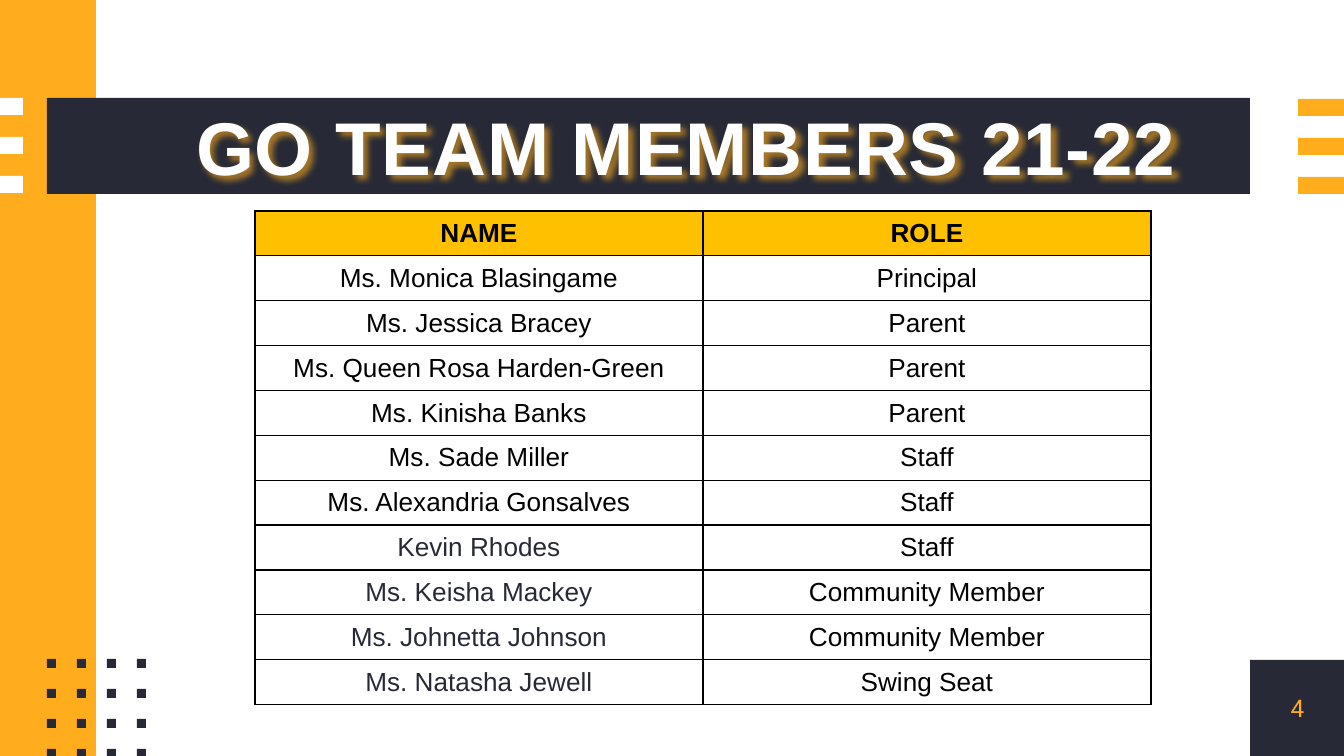
from pptx import Presentation
from pptx import util as u
from pptx.dml.color import RGBColor
from pptx.enum import shapes, text
from pptx.oxml import parse_xml
from pptx.oxml.ns import nsdecls

DARK = RGBColor(0x27, 0x2A, 0x36)
ORANGE = RGBColor(0xFF, 0xAD, 0x1D)
GOLD = RGBColor(0xFF, 0xC0, 0x00)
WHITE = RGBColor(0xFF, 0xFF, 0xFF)
PALE = RGBColor(0xFE, 0xFE, 0xFE)
BLACK = RGBColor(0, 0, 0)
SCALE = 914400 / 134.4

MEMBERS = [
    ("Ms. Monica Blasingame", "Principal", BLACK),
    ("Ms. Jessica Bracey", "Parent", BLACK),
    ("Ms. Queen Rosa Harden-Green", "Parent", BLACK),
    ("Ms. Kinisha Banks", "Parent", BLACK),
    ("Ms. Sade Miller", "Staff", BLACK),
    ("Ms. Alexandria Gonsalves", "Staff", BLACK),
    ("Kevin Rhodes", "Staff", DARK),
    ("Ms. Keisha Mackey", "Community Member", DARK),
    ("Ms. Johnetta Johnson", "Community Member", DARK),
    ("Ms. Natasha Jewell", "Swing Seat", DARK),
]


def px(n):
    return u.Emu(round(n * SCALE))


def line(tag, color, width=9525):
    return parse_xml(
        f'<a:{tag} {nsdecls("a")} w="{width}"><a:solidFill>'
        f'<a:srgbClr val="{color}"/></a:solidFill></a:{tag}>')


class Deck:
    font = "Arial"

    def __init__(self, slide):
        self.slide = slide

    def put(self, frame, words, size, color, bold=False, font=None):
        frame.text = words
        para = frame.paragraphs[0]
        para.alignment = text.PP_ALIGN.CENTER
        para.font.name = font or self.font
        para.font.size = u.Pt(size)
        para.font.bold = bold
        para.font.color.rgb = color
        return para

    def rect(self, x, y, w, h, color):
        box = self.slide.shapes.add_shape(
            shapes.MSO_SHAPE.RECTANGLE, px(x), px(y), px(w), px(h))
        box.shadow.inherit = False
        box.fill.solid()
        box.fill.fore_color.rgb = color
        box.line.fill.background()

    def label(self, x, y, w, h, words, size, color, font):
        frame = self.slide.shapes.add_textbox(px(x), px(y), px(w), px(h)).text_frame
        frame.word_wrap = True
        frame.margin_left = frame.margin_right = 0
        frame.margin_top = frame.margin_bottom = 0
        frame.vertical_anchor = text.MSO_ANCHOR.MIDDLE
        self.put(frame, words, size, color, font=font)

    def title(self, x, y, w, h, words):
        box = self.slide.shapes.title
        box.left, box.top, box.width, box.height = px(x), px(y), px(w), px(h)
        frame = box.text_frame
        frame.word_wrap = False
        frame.auto_size = text.MSO_AUTO_SIZE.NONE
        frame.vertical_anchor = text.MSO_ANCHOR.MIDDLE
        para = self.put(frame, words, 40, PALE, bold=True)
        # Letter spacing, outline and soft shadow
        props = para.runs[0]._r.get_or_add_rPr()
        props.set("spc", "50")
        props.insert(0, line("ln", ORANGE))
        box._element.spPr.append(parse_xml(
            f'<a:effectLst {nsdecls("a")}><a:outerShdw blurRad="38100" '
            f'dist="25400" dir="2700000"><a:srgbClr val="{ORANGE}">'
            '<a:alpha val="60000"/></a:srgbClr></a:outerShdw></a:effectLst>'))

    def cell(self, cell, words, color, fill=None):
        cell.vertical_anchor = text.MSO_ANCHOR.MIDDLE
        props = cell._tc.get_or_add_tcPr()
        for tag in ("lnL", "lnR", "lnT", "lnB"):
            props.append(line(tag, BLACK))
        if fill is None:
            cell.fill.background()
        else:
            cell.fill.solid()
            cell.fill.fore_color.rgb = fill
        self.put(cell.text_frame, words, 14, color, bold=fill is not None)

    def table(self, x, y, w, h, head, rows):
        grid = self.slide.shapes.add_table(
            len(rows) + 1, len(head), px(x), px(y), px(w), px(h)).table
        grid.first_row = grid.horz_banding = False
        for col, words in enumerate(head):
            self.cell(grid.cell(0, col), words, BLACK, GOLD)
        for row, (name, role, color) in enumerate(rows, 1):
            self.cell(grid.cell(row, 0), name, color)
            self.cell(grid.cell(row, 1), role, BLACK)


def main():
    prs = Presentation()
    prs.slide_width, prs.slide_height = px(1344), px(756)
    deck = Deck(prs.slides.add_slide(prs.slide_layouts[5]))

    # Side band, title bar and page corner
    deck.rect(1250, 660, 95, 96, DARK)
    deck.rect(0, 0, 96, 756, ORANGE)
    deck.rect(47, 98, 1203, 96, DARK)

    # Stripes at both edges
    for i in range(3):
        deck.rect(0, 98 + 39 * i, 23, 17, WHITE)
        deck.rect(1298, 99 + 39 * i, 46, 17, ORANGE)

    # Dot grid
    for row in range(4):
        for col in range(4):
            deck.rect(47 + 30 * col, 659 + 30 * row, 9, 9, DARK)

    # Page number, title in front of its bar, and members
    deck.label(1250, 660, 95, 96, "4", 13, ORANGE, "Roboto")
    deck.title(177, 94, 1019, 104, "GO TEAM MEMBERS 21-22")
    tree = deck.slide.shapes._spTree
    tree.append(deck.slide.shapes.title._element)
    deck.table(255, 211, 896, 494, ("NAME", "ROLE"), MEMBERS)

    prs.save("out.pptx")


if __name__ == "__main__":
    main()
